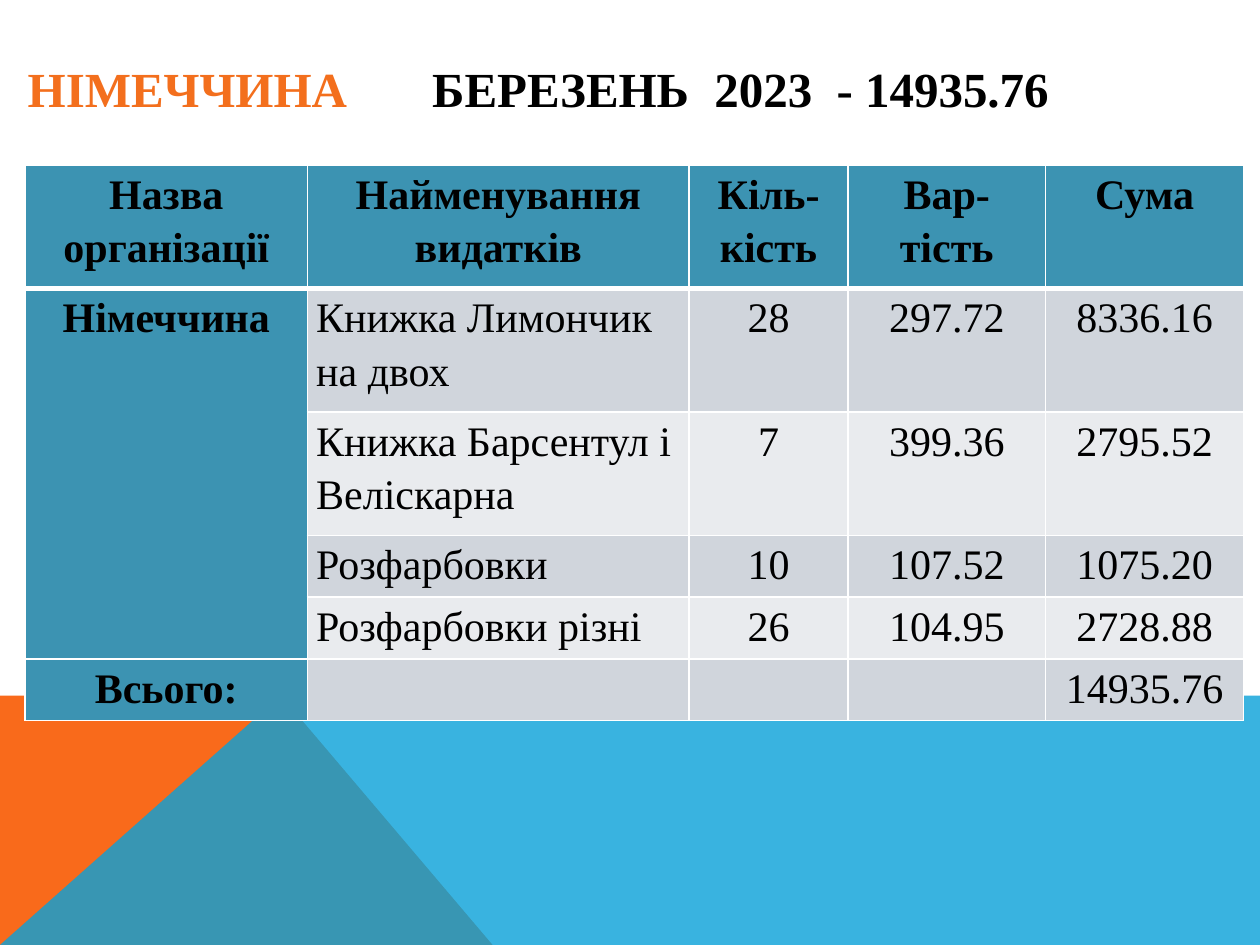
import pptx
import pptx.dml.color
import pptx.enum.text
import pptx.oxml
import pptx.oxml.ns
import pptx.util
from pptx.util import Inches

THEME = {
    "font": "Times New Roman",
    "title_size": 28,
    "table_size": 24,
    "orange": "F96A1B",
    "blue": "08A1D9",
    "blue_opacity": 80,
    "title_accent": "F36F1D",
    "text": "000000",
    "heading_fill": "3C93B2",
    "band_fills": ("D0D5DC", "E9EBEE"),
    "border": "FFFFFF",
    "border_width": 1,
    "heading_border_width": 3,
}

TITLE_RUNS = [
    ("НІМЕЧЧИНА\t", THEME["title_accent"]),
    ("БЕРЕЗЕНЬ\t2023\t- 14935.76", THEME["text"]),
]
TITLE_TABS = (3.21, 5.45, 6.42)

TABLE_ROWS = [
    ("Назва організації", "Найменування\nвидатків", "Кіль-кість", "Вар-\nтість", "Сума"),
    ("Німеччина", "Книжка Лимончик на двох", "28", "297.72", "8336.16"),
    ("", "Книжка Барсентул і Веліскарна", "7", "399.36", "2795.52"),
    ("", "Розфарбовки", "10", "107.52", "1075.20"),
    ("", "Розфарбовки різні", "26", "104.95", "2728.88"),
    ("Всього:", "", "", "", "14935.76"),
]
COLUMN_WIDTHS = (2.24, 3.03, 1.26, 1.57, 1.57)
ROW_HEIGHTS = (0.98, 0.98, 0.98, 0.49, 0.49, 0.49)

BACKDROP_UNIT = Inches(0.01)
BACKDROP = [
    ([(0, 750), (0, 552), (223, 552), (391, 750)], THEME["orange"], 100),
    ([(0, 750), (223, 552), (1000, 552), (1000, 750)], THEME["blue"], THEME["blue_opacity"]),
]


def color(value):
    return pptx.dml.color.RGBColor.from_string(value)


def style_paragraph(paragraph, size, bold, alignment):
    paragraph.alignment = alignment
    paragraph.font.name = THEME["font"]
    paragraph.font.size = pptx.util.Pt(size)
    paragraph.font.bold = bold


def add_backdrop(slide):
    for points, fill, opacity in BACKDROP:
        builder = slide.shapes.build_freeform(*points[0], scale=BACKDROP_UNIT)
        builder.add_line_segments(points[1:], close=True)
        shape = builder.convert_to_shape()
        shape.shadow.inherit = False
        shape.line.fill.background()
        shape.fill.solid()
        shape.fill.fore_color.rgb = color(fill)
        if opacity < 100:
            fill_color = shape.element.spPr.find(".//" + pptx.oxml.ns.qn("a:srgbClr"))
            fill_color.append(pptx.oxml.parse_xml(
                f'<a:alpha {pptx.oxml.ns.nsdecls("a")} val="{opacity * 1000}"/>'))


def fill_title(slide):
    title = slide.shapes.title
    title.left, title.top = Inches(0.12), Inches(0.4)
    title.width, title.height = Inches(9.88), Inches(0.6)
    frame = title.text_frame
    frame.word_wrap = True
    frame.auto_size = pptx.enum.text.MSO_AUTO_SIZE.NONE
    frame.vertical_anchor = pptx.enum.text.MSO_ANCHOR.MIDDLE
    paragraph = frame.paragraphs[0]
    stops = "".join(f'<a:tab pos="{Inches(stop)}" algn="l"/>' for stop in TITLE_TABS)
    paragraph._p.get_or_add_pPr().append(pptx.oxml.parse_xml(
        f'<a:tabLst {pptx.oxml.ns.nsdecls("a")}>{stops}</a:tabLst>'))
    style_paragraph(paragraph, THEME["title_size"], True, pptx.enum.text.PP_ALIGN.LEFT)
    for text, run_color in TITLE_RUNS:
        run = paragraph.add_run()
        run.text = text
        run.font.color.rgb = color(run_color)


def set_borders(cell, row):
    heading_sides = {0: "lnB", 1: "lnT"}
    for side in ("lnL", "lnR", "lnT", "lnB"):
        is_heading = heading_sides.get(row) == side
        width = THEME["heading_border_width" if is_heading else "border_width"]
        cell._tc.get_or_add_tcPr().append(pptx.oxml.parse_xml(
            f'<a:{side} {pptx.oxml.ns.nsdecls("a")} w="{pptx.util.Pt(width)}">'
            f'<a:solidFill><a:srgbClr val="{THEME["border"]}"/></a:solidFill></a:{side}>'))


def fill_cell(cell, text, row, column):
    is_heading = row == 0 or column == 0
    is_item = column == 1 and not is_heading
    set_borders(cell, row)
    cell.fill.solid()
    cell.fill.fore_color.rgb = color(
        THEME["heading_fill"] if is_heading else THEME["band_fills"][(row - 1) % 2])
    cell.margin_left = cell.margin_right = Inches(0.07)
    cell.margin_top = cell.margin_bottom = 0
    if not text:
        return
    cell.text = text
    alignment = pptx.enum.text.PP_ALIGN.LEFT if is_item else pptx.enum.text.PP_ALIGN.CENTER
    for paragraph in cell.text_frame.paragraphs:
        paragraph.line_spacing = 1.15
        style_paragraph(paragraph, THEME["table_size"], is_heading, alignment)
        paragraph.font.color.rgb = color(THEME["text"])


def add_expense_table(slide):
    table = slide.shapes.add_table(
        len(ROW_HEIGHTS), len(COLUMN_WIDTHS), Inches(0.2), Inches(1.31),
        Inches(sum(COLUMN_WIDTHS)), Inches(sum(ROW_HEIGHTS))).table
    for column, width in zip(table.columns, COLUMN_WIDTHS):
        column.width = Inches(width)
    for row, height in zip(table.rows, ROW_HEIGHTS):
        row.height = Inches(height)
    for row, texts in enumerate(TABLE_ROWS):
        for column, text in enumerate(texts):
            fill_cell(table.cell(row, column), text, row, column)
    table.cell(1, 0).merge(table.cell(4, 0))


def main():
    presentation = pptx.Presentation()
    presentation.slide_width, presentation.slide_height = Inches(10), Inches(7.5)
    slide = presentation.slides.add_slide(presentation.slide_layouts.get_by_name("Title Only"))
    add_backdrop(slide)
    fill_title(slide)
    add_expense_table(slide)
    presentation.save("out.pptx")


if __name__ == "__main__":
    main()
